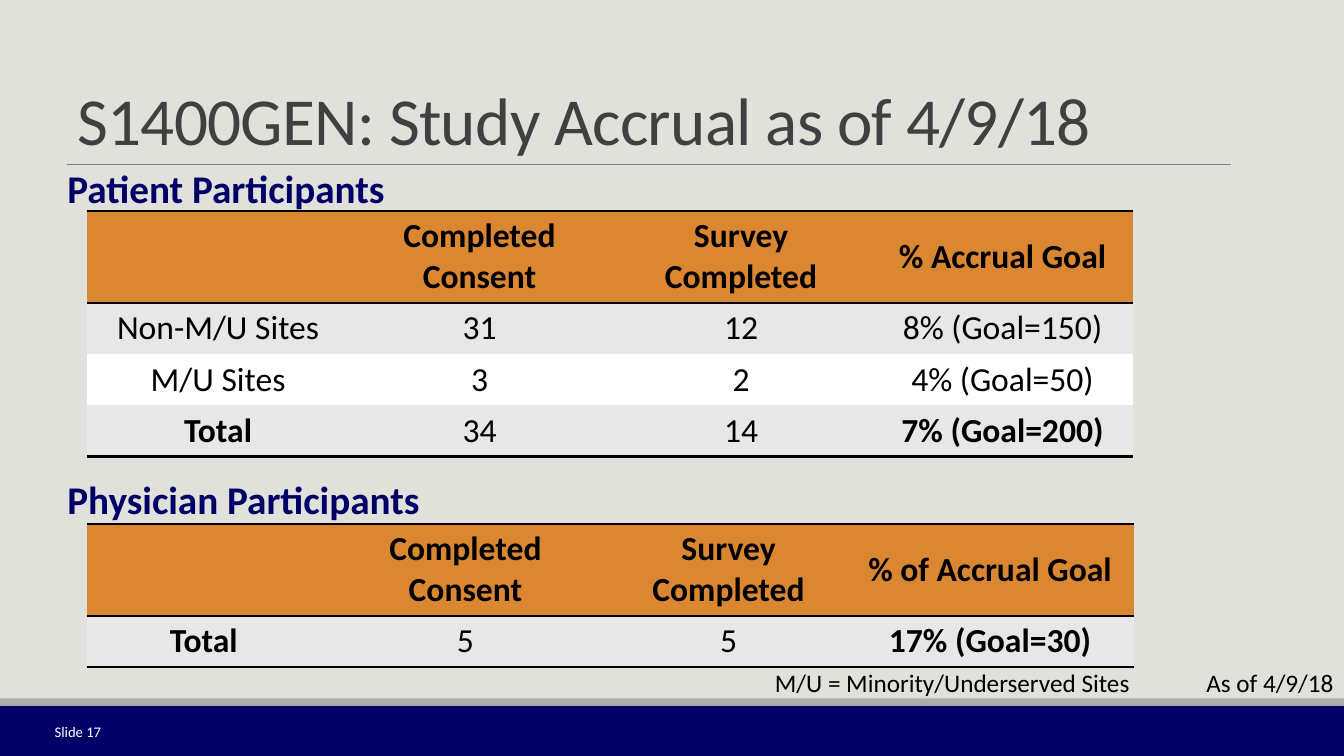
from lxml import etree
from pptx import Presentation
from pptx.dml.color import RGBColor
from pptx.enum import shapes, text
from pptx.oxml import ns
from pptx.util import Cm, Pt

FONT = "Calibri"
STONE = RGBColor(0xE1, 0xE1, 0xDB)
NAVY = RGBColor(0x00, 0x00, 0x66)
BAND_GRAY = RGBColor(0xAC, 0xAD, 0xA8)
RULE_GRAY = RGBColor(0x80, 0x80, 0x80)
TITLE_GRAY = RGBColor(0x40, 0x40, 0x40)
ORANGE = RGBColor(0xDB, 0x86, 0x31)
ROW_GRAY = RGBColor(0xE7, 0xE7, 0xE7)
WHITE = RGBColor(0xFF, 0xFF, 0xFF)
BLACK = RGBColor(0x00, 0x00, 0x00)
NO_TABLE_STYLE = "{2D5ABB26-0587-4C30-8999-92F81FD0307C}"
HEADER_HEIGHT, ROW_HEIGHT = 2.32, 1.29

PATIENT_ROWS = [
    ["", "Completed Consent", "Survey Completed", "% Accrual Goal"],
    ["Non-M/U Sites", "31", "12", "8% (Goal=150)"],
    ["M/U Sites", "3", "2", "4% (Goal=50)"],
    ["Total", "34", "14", "7% (Goal=200)"],
]
PHYSICIAN_ROWS = [
    ["", "Completed Consent", "Survey Completed", "% of Accrual Goal"],
    ["Total", "5", "5", "17% (Goal=30)"],
]


def style(paragraph, size, color, bold=False):
    """Format every run of a paragraph."""
    for run in paragraph.runs:
        run.font.name = FONT
        run.font.size = Pt(size)
        run.font.bold = bold
        run.font.color.rgb = color


def add_band(slide, top, height, color):
    """Add a full-width footer band."""
    band = slide.shapes.add_shape(
        shapes.MSO_SHAPE.RECTANGLE, 0, Cm(top), Cm(33.87), Cm(height))
    band.shadow.inherit = False
    band.fill.solid()
    band.fill.fore_color.rgb = color
    band.line.fill.background()


def add_rule(slide, left, right, y):
    """Add the thin rule under the title."""
    rule = slide.shapes.add_connector(
        shapes.MSO_CONNECTOR.STRAIGHT, Cm(left), Cm(y), Cm(right), Cm(y))
    rule.line.color.rgb = RULE_GRAY
    rule.line.width = Pt(0.5)
    etree.SubElement(rule._element.spPr, ns.qn("a:effectLst"))


def add_text(slide, box, wording, size, color, bold=False,
             align=text.PP_ALIGN.LEFT, anchor=text.MSO_ANCHOR.TOP):
    """Add a wrapping text box and return its frame."""
    frame = slide.shapes.add_textbox(*map(Cm, box)).text_frame
    frame.word_wrap = True
    frame.vertical_anchor = anchor
    frame.text = wording
    for paragraph in frame.paragraphs:
        paragraph.alignment = align
        style(paragraph, size, color, bold)
    return frame


def add_border(cell, side):
    """Add a black border to one side of a cell."""
    border = etree.SubElement(
        cell._tc.get_or_add_tcPr(), ns.qn(f"a:ln{side}"), w=str(Pt(2)))
    fill = etree.SubElement(border, ns.qn("a:solidFill"))
    etree.SubElement(fill, ns.qn("a:srgbClr"), val=str(BLACK))


def fill_cell(cell, wording, row, column, last_row):
    """Write and format one accrual cell."""
    is_header = row == 0
    if is_header:
        add_border(cell, "T")
    if is_header or row == last_row:
        add_border(cell, "B")
    cell.fill.solid()
    cell.fill.fore_color.rgb = (
        ORANGE if is_header else ROW_GRAY if row % 2 else WHITE)
    cell.vertical_anchor = text.MSO_ANCHOR.MIDDLE
    cell.text_frame.text = wording
    paragraph = cell.text_frame.paragraphs[0]
    paragraph.alignment = text.PP_ALIGN.CENTER
    is_bold = is_header or (row == last_row and column in (0, 3))
    style(paragraph, 24, BLACK, is_bold)


def add_accrual_table(slide, top, widths, rows):
    """Add an accrual table with a ruled header and closing line."""
    height = HEADER_HEIGHT + ROW_HEIGHT * (len(rows) - 1)
    table = slide.shapes.add_table(
        len(rows), len(widths), Cm(2.2), Cm(top), Cm(sum(widths)), Cm(height)).table
    table._tbl.tblPr.find(ns.qn("a:tableStyleId")).text = NO_TABLE_STYLE
    for column, width in zip(table.columns, widths):
        column.width = Cm(width)
    for r, wordings in enumerate(rows):
        table.rows[r].height = Cm(ROW_HEIGHT if r else HEADER_HEIGHT)
        for c, wording in enumerate(wordings):
            fill_cell(table.cell(r, c), wording, r, c, len(rows) - 1)


def add_title(slide, wording):
    """Add the tightly spaced slide title."""
    title = add_text(slide, (1.7, 0.1, 29.29, 4.04), wording, 48, TITLE_GRAY,
                     anchor=text.MSO_ANCHOR.BOTTOM).paragraphs[0]
    title.line_spacing = 0.85
    title.runs[0].font._element.set("spc", "-50")


def add_headings(slide, wording):
    """Add the headings that stand above the two tables."""
    frame = add_text(slide, (1.7, 4.14, 29.29, 11.43), wording, 28, NAVY, True)
    frame.margin_left = frame.margin_right = 0
    for heading in frame.paragraphs:
        heading.line_spacing = 0.9
    frame.paragraphs[1].space_before = Pt(192)


def add_footnote(slide, wording):
    """Add the footnote with its date set at a tab stop."""
    frame = add_text(slide, (18.97, 16.69, 14.9, 1.02), wording, 18, BLACK)
    frame.margin_left, frame.margin_right = Cm(0.56), 0
    properties = frame.paragraphs[0]._p.get_or_add_pPr()
    stops = etree.SubElement(properties, ns.qn("a:tabLst"))
    etree.SubElement(stops, ns.qn("a:tab"), pos=str(Cm(10.87)), algn="l")


def main():
    """Build the study accrual slide."""
    deck = Presentation()
    deck.slide_width, deck.slide_height = Cm(33.87), Cm(19.05)
    slide = deck.slides.add_slide(deck.slide_layouts[6])
    slide.background.fill.solid()
    slide.background.fill.fore_color.rgb = STONE
    add_band(slide, 17.78, 1.27, NAVY)
    add_band(slide, 17.6, 0.18, BAND_GRAY)
    add_rule(slide, 1.68, 31.01, 4.14)
    add_title(slide, "S1400GEN: Study Accrual as of 4/9/18")
    add_headings(slide, "Patient Participants\nPhysician Participants")
    add_text(slide, (0.18, 17.93, 2.62, 1.02), "Slide 17", 10.5, WHITE,
             align=text.PP_ALIGN.RIGHT, anchor=text.MSO_ANCHOR.MIDDLE)
    add_accrual_table(slide, 5.31, [6.59] * 4, PATIENT_ROWS)
    add_accrual_table(slide, 13.2, [5.87, 7.32, 5.94, 7.24], PHYSICIAN_ROWS)
    add_footnote(slide, "M/U = Minority/Underserved Sites\tAs of 4/9/18")
    deck.save("out.pptx")


if __name__ == "__main__":
    main()
